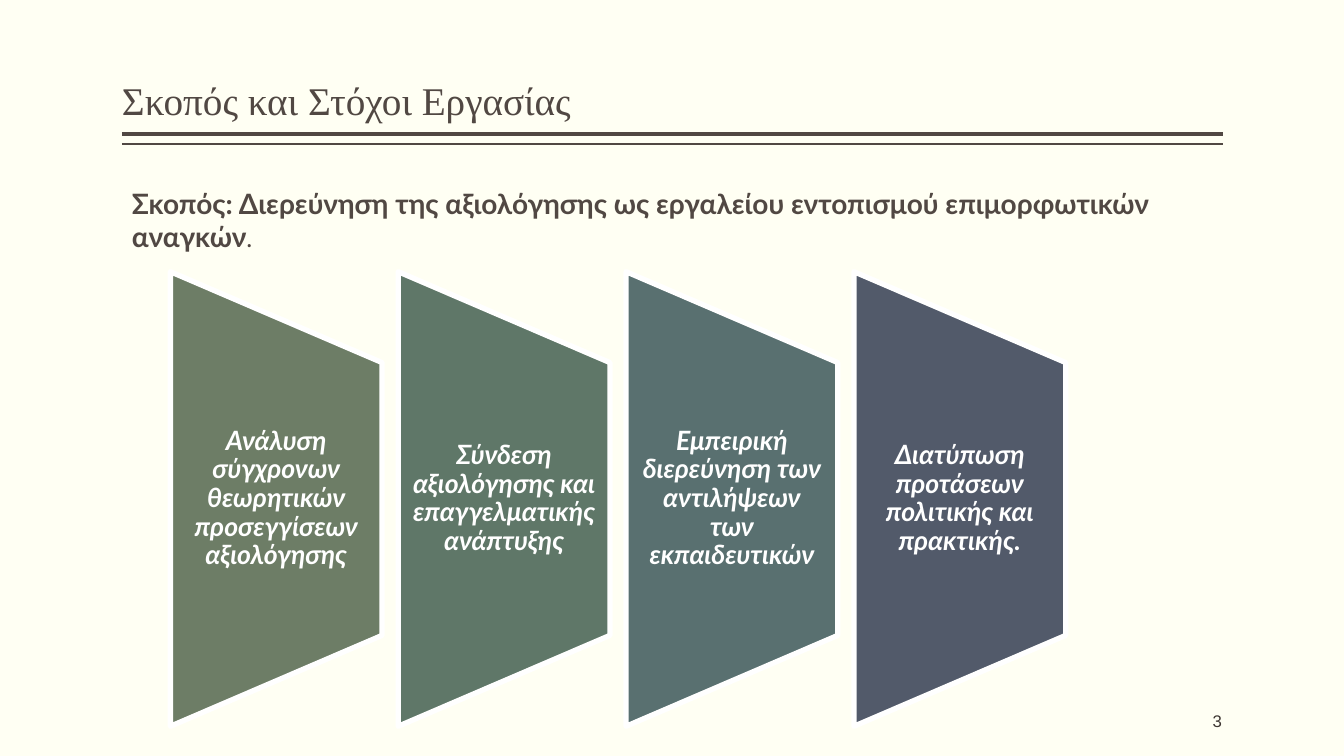
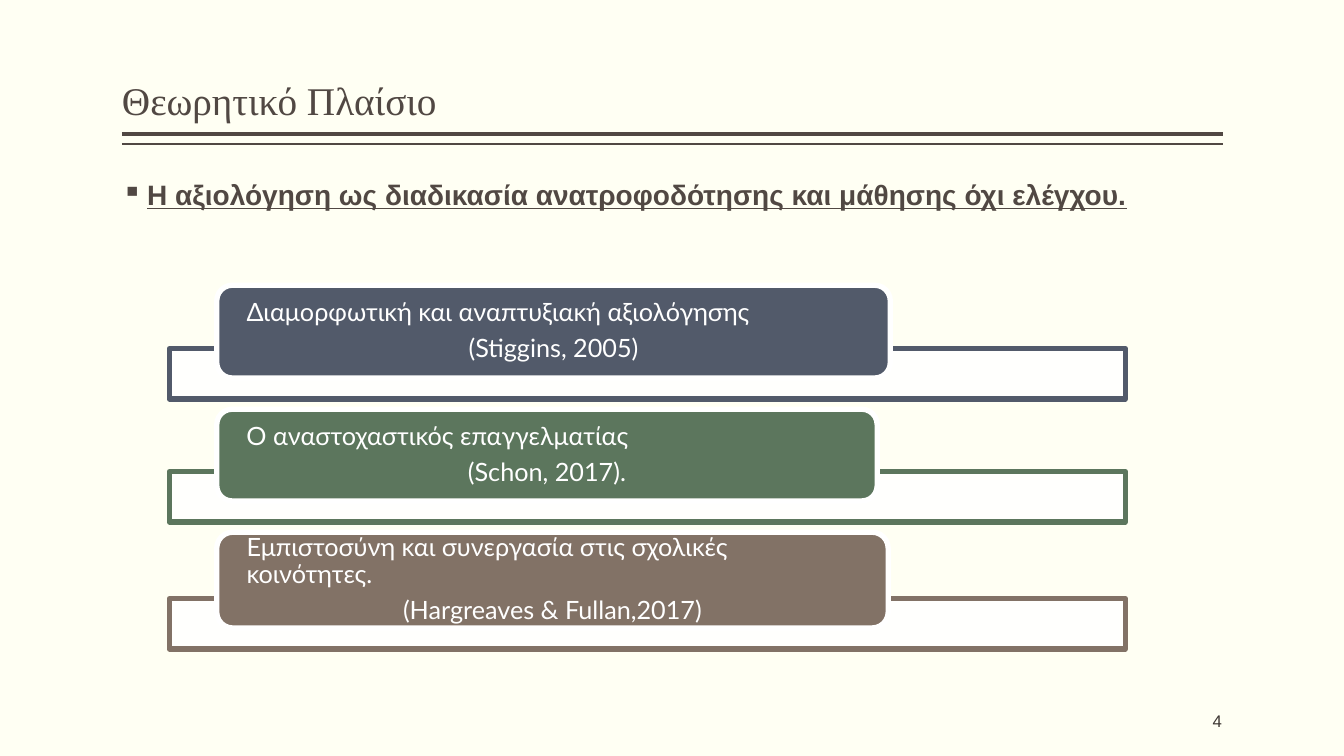
from dataclasses import dataclass

from lxml import etree
from pptx import Presentation
from pptx.dml import color
from pptx.enum import shapes, text
from pptx.oxml import ns
from pptx.util import Inches, Pt


@dataclass(frozen=True)
class Theme:
    paper: str = "FFFFF3"
    ink: str = "514843"
    number: str = "3D3632"
    white: str = "FFFFFF"
    slate: str = "525A6A"
    goals: tuple = ("6D7D66", "5F7768", "597070", "525A6A")
    green: str = "5C765D"
    brown: str = "827266"
    serif: str = "Times New Roman"
    sans: str = "Arial"
    body: str = "Lato"
    title_size: int = 28
    lead_size: int = 20
    goal_size: int = 19
    text_size: int = 18
    number_size: int = 12
    outline: float = 3.78
    leading: float = 0.9
    space_after: float = 0.35


THEME = Theme()
LEFT, WIDTH = 1.21, 10.92
CENTER, RIGHT = text.PP_ALIGN.CENTER, text.PP_ALIGN.RIGHT
MIDDLE = text.MSO_ANCHOR.MIDDLE

GOALS = (
    "Ανάλυση σύγχρονων θεωρητικών προσεγγίσεων αξιολόγησης",
    "Σύνδεση αξιολόγησης και επαγγελματικής ανάπτυξης",
    "Εμπειρική διερεύνηση των αντιλήψεων των εκπαιδευτικών",
    "Διατύπωση προτάσεων πολιτικής και πρακτικής.",
)
THEORIES = (
    ("Διαμορφωτική και αναπτυξιακή αξιολόγησης", "(Stiggins, 2005)",
     THEME.slate, 3.46, (2.83, 6.68, 0.92)),
    ("Ο αναστοχαστικός επαγγελματίας", "(Schon, 2017).",
     THEME.green, 4.68, (4.06, 6.55, 0.91)),
    ("Εμπιστοσύνη και συνεργασία στις σχολικές κοινότητες.",
     "(Hargreaves & Fullan,2017)",
     THEME.brown, 5.94, (5.28, 6.66, 0.95)),
)


def rgb(value):
    return color.RGBColor.from_string(value)


def style(font, face, size, ink, bold=False, italic=False, underline=False):
    font.name, font.size = face, Pt(size)
    font.color.rgb = rgb(ink)
    font.bold, font.italic, font.underline = bold, italic, underline


def set_frame(frame, inset_x, inset_y, anchor):
    frame.word_wrap = True
    frame.margin_left = frame.margin_right = Inches(inset_x)
    frame.margin_top = frame.margin_bottom = Inches(inset_y)
    frame.vertical_anchor = anchor


def add_text(slide, box, content, inset_x=0, inset_y=0.05,
             anchor=text.MSO_ANCHOR.TOP):
    frame = slide.shapes.add_textbox(*map(Inches, box)).text_frame
    set_frame(frame, inset_x, inset_y, anchor)
    frame.text = content
    return frame.paragraphs[0]


def add_block(slide, preset, box, fill, line):
    block = slide.shapes.add_shape(preset, *map(Inches, box))
    block.shadow.inherit = False
    block.fill.solid()
    block.fill.fore_color.rgb = rgb(fill)
    block.line.color.rgb = rgb(line)
    block.line.width = Pt(THEME.outline)
    return block


def add_rule(slide, y, weight):
    rule = slide.shapes.add_connector(
        shapes.MSO_CONNECTOR.STRAIGHT,
        Inches(LEFT), Inches(y), Inches(LEFT + WIDTH), Inches(y))
    rule.line.color.rgb = rgb(THEME.ink)
    rule.line.width = Pt(weight)
    etree.SubElement(rule._element.spPr, ns.qn("a:effectLst"))


def add_bullet(paragraph, mark, indent):
    properties = paragraph._p.get_or_add_pPr()
    properties.set("marL", str(Inches(indent)))
    properties.set("indent", str(-Inches(indent)))
    etree.SubElement(properties, ns.qn("a:buChar")).set("char", mark)


def set_spacing(paragraph, size):
    paragraph.line_spacing = THEME.leading
    paragraph.space_after = Pt(size * THEME.space_after)


def add_page(deck, title, number):
    slide = deck.slides.add_slide(deck.slide_layouts[6])
    slide.background.fill.solid()
    slide.background.fill.fore_color.rgb = rgb(THEME.paper)
    for y, weight in ((1.33, 3), (1.43, 1)):
        add_rule(slide, y, weight)
    heading = add_text(slide, (LEFT, 0.08, WIDTH, 1.2), title,
                       anchor=text.MSO_ANCHOR.BOTTOM)
    heading.line_spacing = THEME.leading
    style(heading.runs[0].font, THEME.serif, THEME.title_size, THEME.ink)
    page = add_text(slide, (10.12, 6.95, 2, 0.4), str(number), anchor=MIDDLE)
    page.alignment = RIGHT
    style(page.runs[0].font, THEME.sans, THEME.number_size, THEME.number)
    return slide


def add_goal(slide, left, fill, content):
    depth, length, middle = 2.1, 4.51, 4.95
    panel = add_block(
        slide, shapes.MSO_SHAPE.FLOWCHART_MANUAL_OPERATION,
        (left + (depth - length) / 2, middle - depth / 2, length, depth),
        fill, THEME.white)
    panel.rotation = 270
    goal = add_text(slide, (left, 3.6, depth, 2.7), content, 0.13, 0, MIDDLE)
    goal.alignment = CENTER
    set_spacing(goal, THEME.goal_size)
    style(goal.runs[0].font, THEME.body, THEME.goal_size, THEME.white,
          bold=True, italic=True)


def add_theory(slide, idea, citation, tone, bar_top, card):
    bar = add_block(slide, shapes.MSO_SHAPE.RECTANGLE,
                    (1.68, bar_top, 9.48, 0.5), THEME.white, tone)
    shade = bar._element.spPr.find(".//" + ns.qn("a:srgbClr"))
    etree.SubElement(shade, ns.qn("a:alpha")).set("val", "90000")
    top, width, height = card
    label = add_block(slide, shapes.MSO_SHAPE.ROUNDED_RECTANGLE,
                      (2.15, top, width, height), tone, THEME.white)
    frame = label.text_frame
    set_frame(frame, 0.25, 0, MIDDLE)
    frame.text = f"{idea}\n{citation}"
    for paragraph, alignment in zip(frame.paragraphs,
                                    (text.PP_ALIGN.LEFT, CENTER)):
        paragraph.alignment = alignment
        set_spacing(paragraph, THEME.text_size)
        style(paragraph.runs[0].font, THEME.body, THEME.text_size, THEME.white)


def build_goals(deck):
    slide = add_page(deck, "Σκοπός και Στόχοι Εργασίας", 3)
    for index, (fill, content) in enumerate(zip(THEME.goals, GOALS)):
        add_goal(slide, 1.69 + 2.26 * index, fill, content)
    purpose = add_text(
        slide, (LEFT, 1.8, 11.03, 0.77),
        "Σκοπός: Διερεύνηση της αξιολόγησης ως εργαλείου εντοπισμού "
        "επιμορφωτικών αναγκών", inset_x=0.1)
    style(purpose.runs[0].font, THEME.body, THEME.lead_size, THEME.ink,
          bold=True)
    stop = purpose.add_run()
    stop.text = "."
    style(stop.font, THEME.body, THEME.text_size, THEME.ink)


def build_theories(deck):
    slide = add_page(deck, "Θεωρητικό Πλαίσιο", 4)
    thesis = add_text(
        slide, (LEFT, 1.75, WIDTH, 0.5),
        "Η αξιολόγηση ως διαδικασία ανατροφοδότησης και μάθησης όχι ελέγχου.")
    add_bullet(thesis, "▪", 0.25)
    thesis.line_spacing = THEME.leading
    style(thesis.runs[0].font, THEME.sans, THEME.lead_size, THEME.ink,
          bold=True, underline=True)
    for theory in THEORIES:
        add_theory(slide, *theory)


def main():
    deck = Presentation()
    deck.slide_width, deck.slide_height = Inches(13.33), Inches(7.5)
    build_goals(deck)
    build_theories(deck)
    deck.save("out.pptx")


if __name__ == "__main__":
    main()
